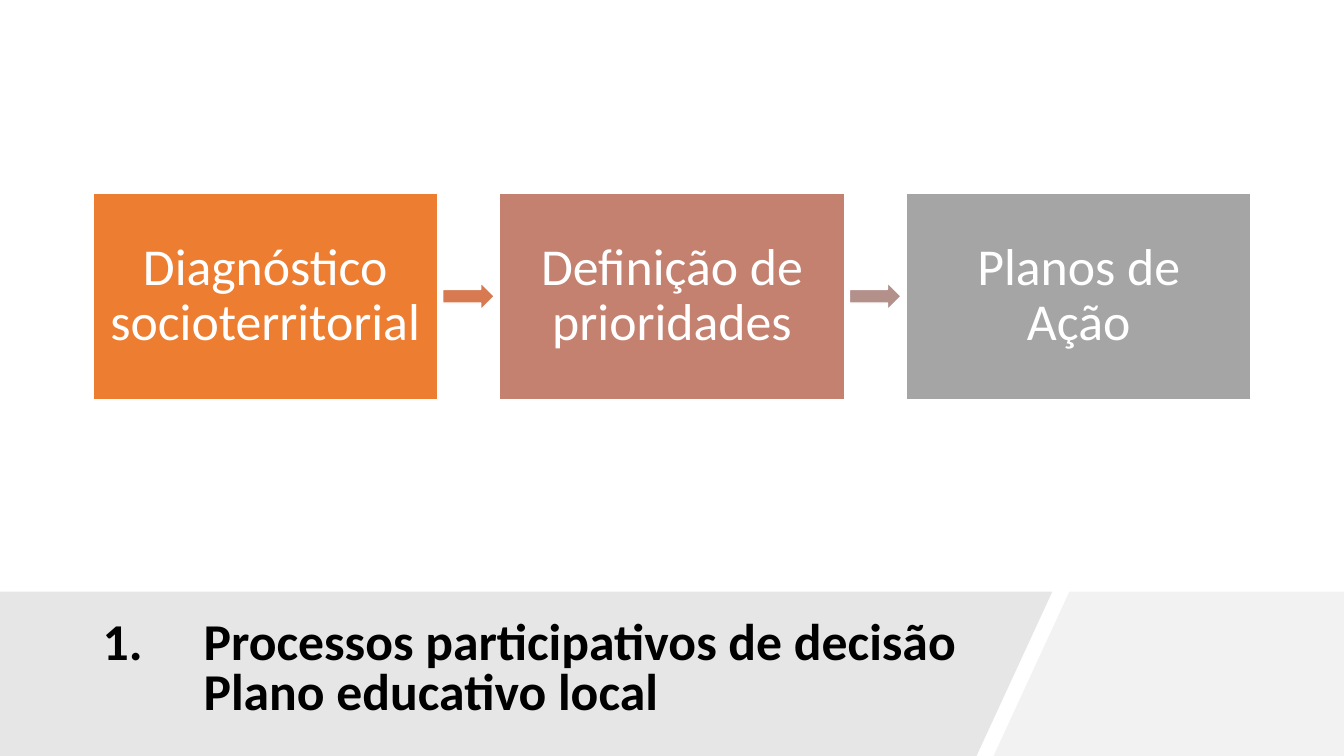
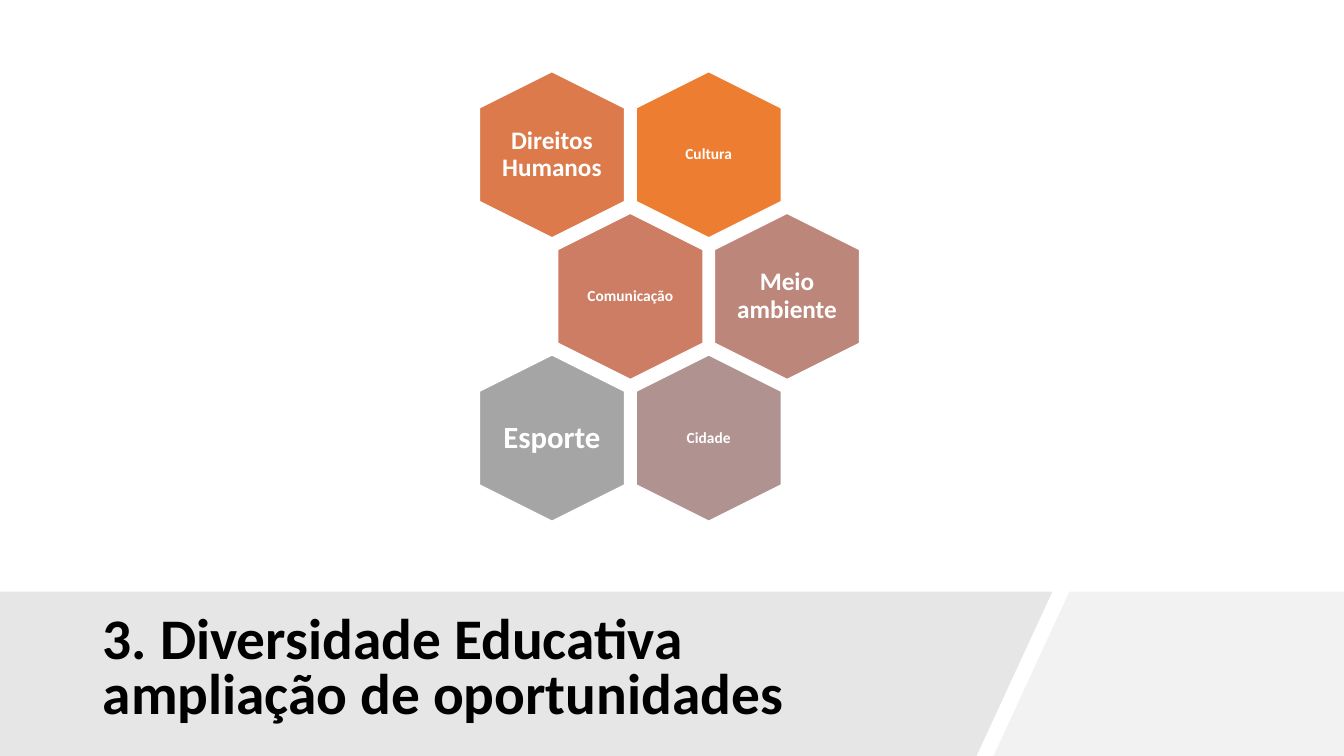
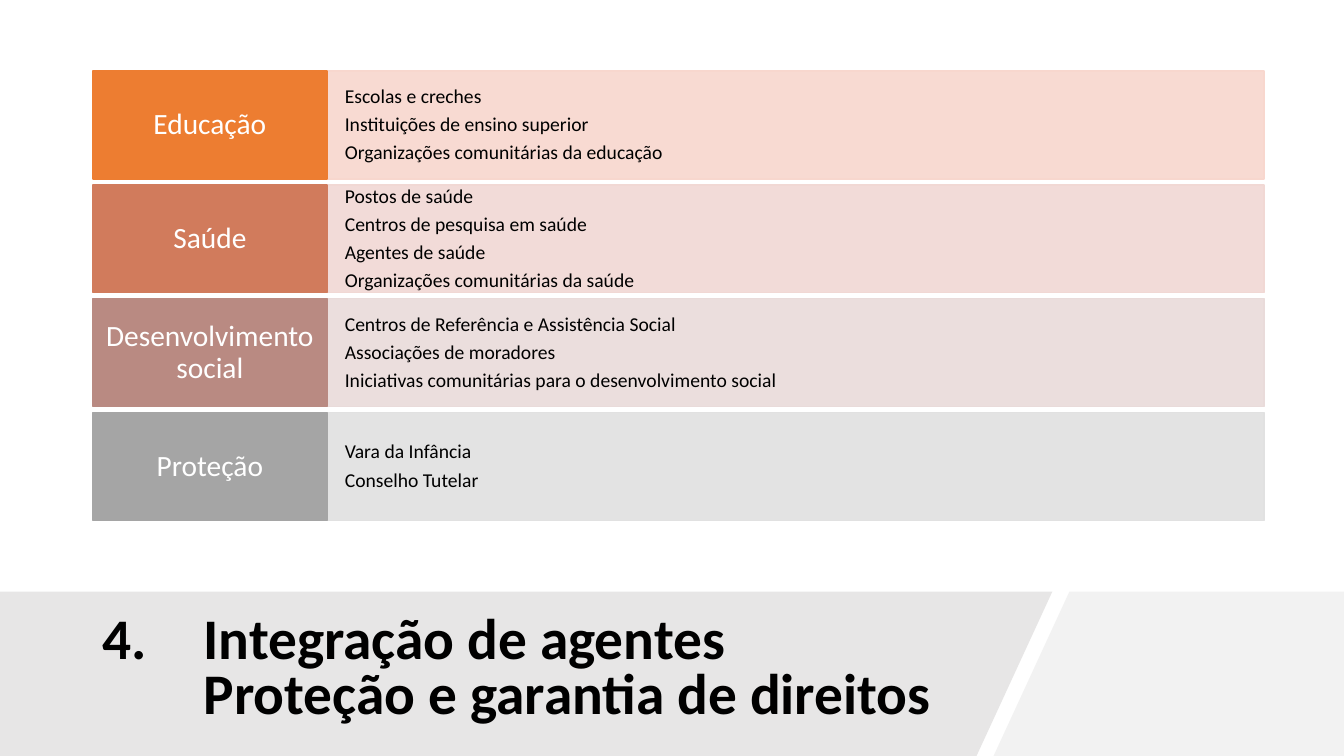
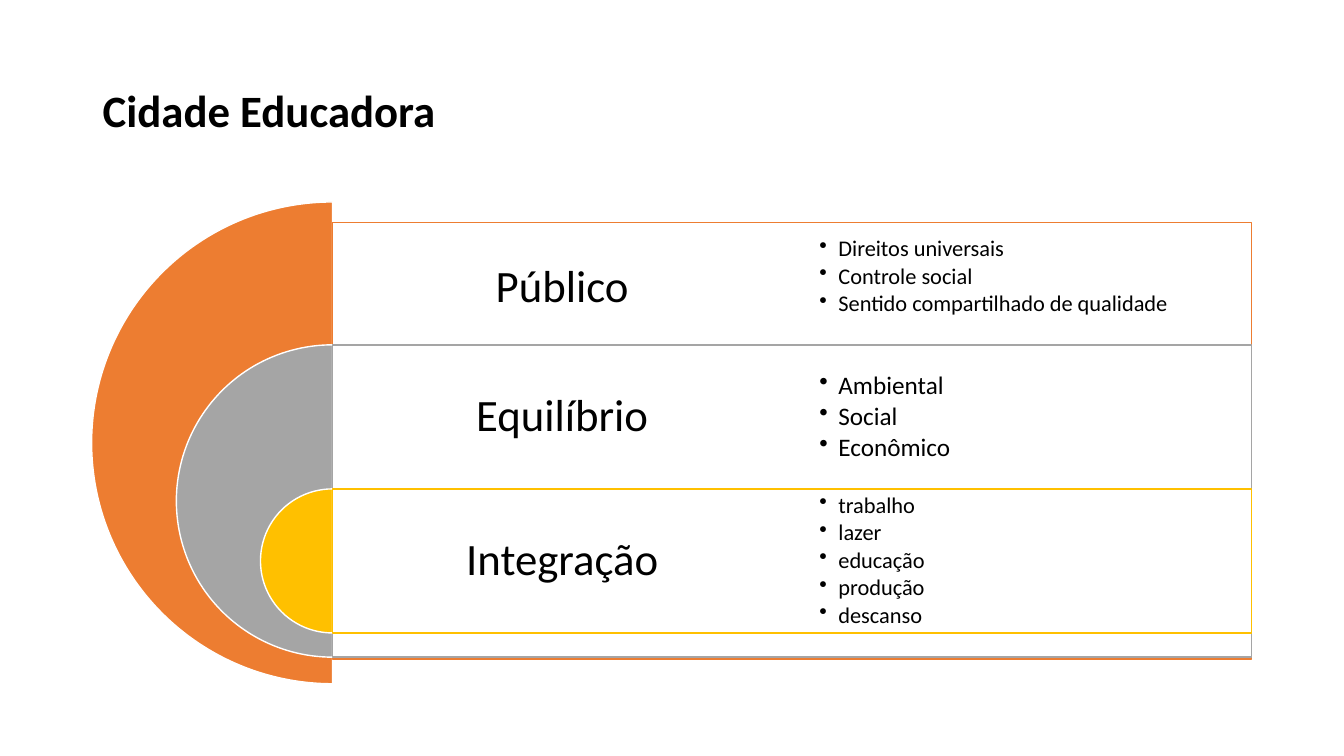
from lxml.etree import SubElement
from pptx import Presentation
from pptx.dml.color import RGBColor
from pptx.enum.shapes import MSO_SHAPE
from pptx.enum.text import MSO_ANCHOR, PP_ALIGN
from pptx.oxml.ns import qn
from pptx.util import Cm, Pt

COLORS = {
    "white": "FFFFFF", "black": "000000", "band": "E7E6E6", "corner": "F2F2F2",
    "orange": "ED7D31", "gray": "A5A5A5", "gold": "FFC000",
    "copper": "DC7A4B", "terracotta": "CC7D64", "rose": "BD867B", "mauve": "B09391",
    "clay": "C48170", "rust": "D87A51", "dusk": "B4908B",
    "brick": "D17B5C", "wood": "B98A82",
    "peach": "F8D7CE", "blush": "F1D8D4", "pale_rose": "E9DBDA", "pale_gray": "E1E1E1",
}
FONT = "Calibri"
LEFT = 2.34
BAND_TOP, SLIDE_W, SLIDE_H = 14.91, 33.87, 19.05
TITLE = {"size": 41, "bold": True, "color": "black", "align": PP_ALIGN.LEFT,
         "line": 0.8, "after": 0, "margins": (0.25, 0.13)}


def rgb(name):
    return RGBColor.from_string(COLORS[name])


def set_attrs(target, values):
    for name, value in values.items():
        setattr(target, name, value)


def write(sp, lines, size, color="white", bold=False, align=PP_ALIGN.CENTER,
          line=0.9, after=0.35, margins=(0, 0), bullet=False, tab=None):
    tf = sp.text_frame
    mx, my = map(Cm, margins)
    set_attrs(tf, {"word_wrap": True, "vertical_anchor": MSO_ANCHOR.MIDDLE,
                   "margin_left": mx, "margin_right": mx,
                   "margin_top": my, "margin_bottom": my})
    for i, text in enumerate(lines):
        p = tf.add_paragraph() if i else tf.paragraphs[0]
        p.text = text
        set_attrs(p, {"alignment": align, "line_spacing": line,
                      "space_after": Pt(size * after)})
        pPr = p._p.get_or_add_pPr()
        if bullet:
            pPr.set("marL", str(Cm(0.48)))
            pPr.set("indent", str(-Cm(0.48)))
            SubElement(pPr, qn("a:buChar"), char="•")
        if tab:
            tabs = SubElement(pPr, qn("a:tabLst"))
            SubElement(tabs, qn("a:tab"), pos=str(Cm(tab)), algn="l")
        for r in p.runs:
            set_attrs(r.font, {"name": FONT, "size": Pt(size), "bold": bold})
            r.font.color.rgb = rgb(color)


def paint(sp, fill, line=None, opacity=None):
    sp.shadow.inherit = False
    sp.fill.solid()
    sp.fill.fore_color.rgb = rgb(fill)
    if opacity:
        color = sp._element.spPr.find(qn("a:solidFill"))[0]
        SubElement(color, qn("a:alpha"), val=str(opacity * 1000))
    if line:
        sp.line.color.rgb = rgb(line)
        sp.line.width = Pt(1)
    else:
        sp.line.fill.background()


def add_shape(s, kind, box, fill, line="white", opacity=None):
    sp = s.shapes.add_shape(kind, *map(Cm, box))
    paint(sp, fill, line, opacity)
    return sp


def add_text(s, box, lines, **style):
    write(s.shapes.add_textbox(*map(Cm, box)), lines, **style)


def add_polygon(s, points, fill):
    points = [(Cm(x), Cm(y)) for x, y in points]
    builder = s.shapes.build_freeform(*points[0])
    builder.add_line_segments(points[1:])
    paint(builder.convert_to_shape(), fill)


def add_slide(prs):
    return prs.slides.add_slide(prs.slide_layouts[6])


def add_band_slide(prs, title, **style):
    s = add_slide(prs)
    add_polygon(s, [(26.95, BAND_TOP), (SLIDE_W, BAND_TOP),
                    (SLIDE_W, SLIDE_H), (25.04, SLIDE_H)], "corner")
    add_polygon(s, [(0, BAND_TOP), (26.52, BAND_TOP),
                    (24.61, SLIDE_H), (0, SLIDE_H)], "band")
    add_text(s, (LEFT, 15.37, 22.43, 3.05), [title], **{**TITLE, **style})
    return s


def build_process(prs):
    s = add_band_slide(
        prs, "1.\tProcessos participativos de decisão\n\tPlano educativo local",
        size=36.9, tab=2.54)
    steps = [("Diagnóstico socioterritorial", "orange", "rust"),
             ("Definição de prioridades", "clay", "dusk"),
             ("Planos de Ação", "gray", None)]
    top, width, height, pitch = 4.86, 8.69, 5.21, 10.25
    arrow_w, arrow_h = 1.3, 0.69
    for i, (text, fill, arrow) in enumerate(steps):
        x = LEFT + i * pitch
        sp = add_shape(s, MSO_SHAPE.RECTANGLE, (x, top, width, height), fill)
        write(sp, [text], size=37, margins=(0.43, 0.43))
        if arrow:
            add_shape(s, MSO_SHAPE.RIGHT_ARROW,
                      (x + (width + pitch - arrow_w) / 2,
                       top + (height - arrow_h) / 2, arrow_w, arrow_h), arrow)


def build_honeycomb(prs):
    s = add_band_slide(prs, "3. Diversidade Educativa\nampliação de oportunidades")
    rows = [[("Direitos Humanos", "copper", 18), ("Cultura", "orange", 11)],
            [("Comunicação", "terracotta", 11), ("Meio ambiente", "rose", 18)],
            [("Esporte", "gray", 22), ("Cidade", "mauve", 11)]]
    length, width, text_w, text_h = 4.19, 3.66, 2.54, 2.9
    step_x, step_y = 3.95, 3.57
    for i, row in enumerate(rows):
        for j, (text, fill, size) in enumerate(row):
            cx = 13.91 + (j + i % 2 / 2) * step_x
            cy = 3.9 + i * step_y
            sp = add_shape(s, MSO_SHAPE.HEXAGON,
                           (cx - length / 2, cy - width / 2, length, width), fill)
            sp.rotation = 90
            add_text(s, (cx - text_w / 2, cy - text_h / 2, text_w, text_h),
                     [text], size=size, bold=True)


def build_agents(prs):
    s = add_band_slide(
        prs, "4.\tIntegração de agentes\n\tProteção e garantia de direitos", tab=2.54)
    rows = [
        ("Educação", "orange", "peach",
         ["Escolas e creches", "Instituições de ensino superior",
          "Organizações comunitárias da educação"]),
        ("Saúde", "brick", "blush",
         ["Postos de saúde", "Centros de pesquisa em saúde", "Agentes de saúde",
          "Organizações comunitárias da saúde"]),
        ("Desenvolvimento social", "wood", "pale_rose",
         ["Centros de Referência e Assistência Social", "Associações de moradores",
          "Iniciativas comunitárias para o desenvolvimento social"]),
        ("Proteção", "gray", "pale_gray", ["Vara da Infância", "Conselho Tutelar"]),
    ]
    head_w, body_w, height, pitch = 5.9, 23.62, 2.72, 2.87
    for i, (head, fill, tint, agents) in enumerate(rows):
        y = 1.79 + i * pitch
        sp = add_shape(s, MSO_SHAPE.RECTANGLE, (LEFT + head_w, y, body_w, height),
                       tint, tint, 90)
        write(sp, agents, size=14, color="black", align=PP_ALIGN.LEFT,
              margins=(0.45, 0.69))
        sp = add_shape(s, MSO_SHAPE.RECTANGLE, (LEFT, y, head_w, height), fill, fill)
        write(sp, [head], size=21, margins=(0.3, 0.28))


def build_city(prs):
    s = add_slide(prs)
    add_text(s, (LEFT, 1.02, 29.21, 3.68), ["Cidade Educadora"],
             **{**TITLE, "size": 32, "line": 0.9})
    levels = [
        ("Público", "orange", (5.09, 12.14), (5.61, 11), 3.3, 5.16, 16,
         ["Direitos universais", "Controle social",
          "Sentido compartilhado de qualidade"]),
        ("Equilíbrio", "gray", (8.69, 7.87), (8.69, 7.87), 3.63, 8.69, 18,
         ["Ambiental", "Social", "Econômico"]),
        ("Integração", "gold", (12.32, 3.63), (12.32, 3.63), 3.63, 12.32, 16,
         ["trabalho", "lazer", "educação", "produção", "descanso"]),
    ]
    axis, column = 8.38, 11.58
    for name, color, pie, panel, label_h, list_top, size, items in levels:
        top, diameter = pie
        sp = add_shape(s, MSO_SHAPE.PIE,
                       (axis - diameter / 2, top, diameter, diameter), color)
        sp.adjustments[0], sp.adjustments[1] = 54, 162
        top, height = panel
        add_shape(s, MSO_SHAPE.RECTANGLE, (axis, top, 2 * column, height),
                  "white", color, 90)
        add_text(s, (axis, top, column, label_h), [name], size=32, color="black",
                 margins=(0.33, 0.33))
        add_text(s, (axis + column, list_top, column, 3.63), items, size=size,
                 color="black", align=PP_ALIGN.LEFT, after=0.15,
                 margins=(0.69, 0.69), bullet=True)


def main():
    prs = Presentation()
    set_attrs(prs, {"slide_width": Cm(SLIDE_W), "slide_height": Cm(SLIDE_H)})
    for build in (build_process, build_honeycomb, build_agents, build_city):
        build(prs)
    prs.save("out.pptx")


if __name__ == "__main__":
    main()
